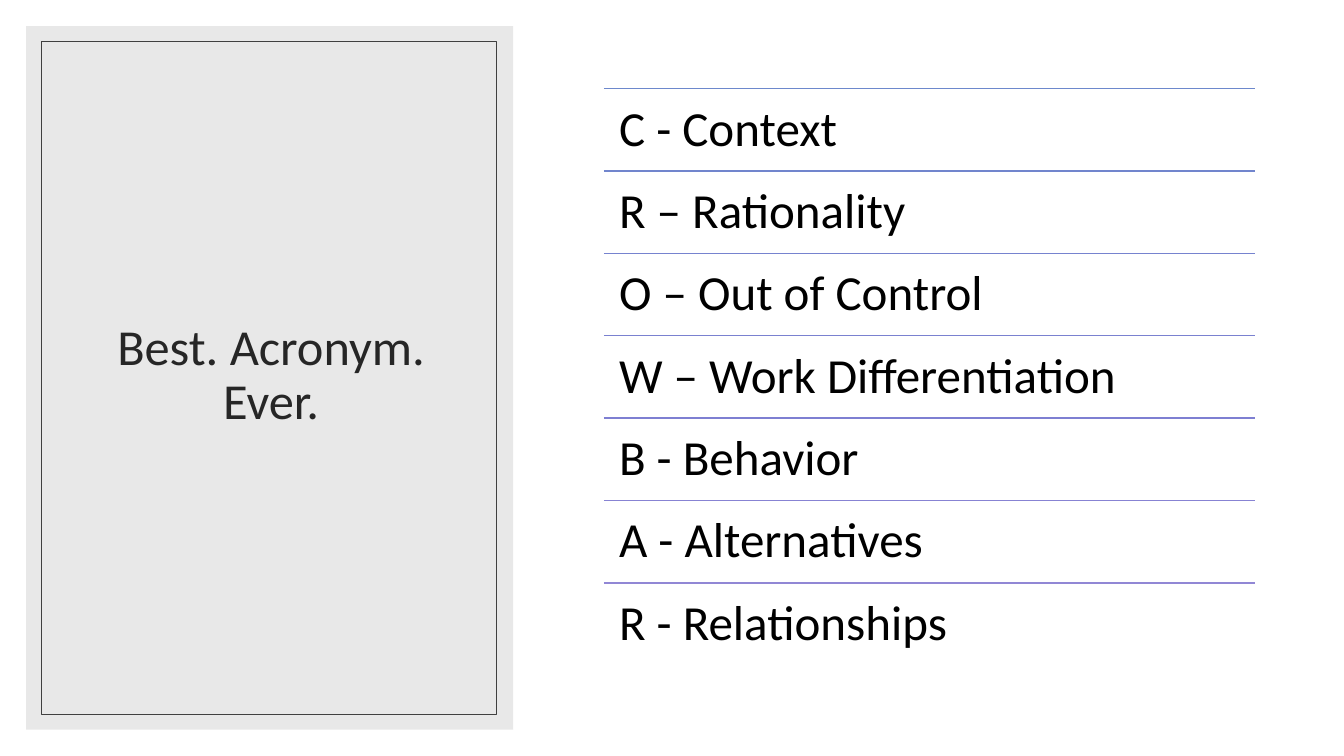
import pptx
import pptx.util
import pptx.dml.color
import pptx.enum.shapes
import pptx.enum.text
import pptx.oxml
import pptx.oxml.ns
import lxml.etree

Inches = pptx.util.Inches
Pt = pptx.util.Pt
RECT = pptx.enum.shapes.MSO_SHAPE.RECTANGLE
STRAIGHT = pptx.enum.shapes.MSO_CONNECTOR.STRAIGHT
ALIGN = pptx.enum.text.PP_ALIGN
ANCHOR = pptx.enum.text.MSO_ANCHOR

ROWS = [
    ("C - Context", "6D88CC"),
    ("R – Rationality", "7185CD"),
    ("O – Out of Control", "7683CF"),
    ("W – Work Differentiation", "7A81D0"),
    ("B - Behavior", "7E7FD2"),
    ("A - Alternatives", "8783D3"),
    ("R - Relationships", "9187D5"),
]


def color(code):
    return pptx.dml.color.RGBColor.from_string(code)


def add_rect(slide, left, top, width, height, fill=None, line=None):
    rect = slide.shapes.add_shape(
        RECT, Inches(left), Inches(top), Inches(width), Inches(height))
    rect.shadow.inherit = False
    if fill:
        rect.fill.solid()
        rect.fill.fore_color.rgb = color(fill)
    else:
        rect.fill.background()
    if line:
        rect.line.color.rgb = color(line)
        rect.line.width = Pt(0.5)
    else:
        rect.line.fill.background()
    return rect


def set_alpha(shape, share):
    tone = shape.element.spPr.find(".//" + pptx.oxml.ns.qn("a:srgbClr"))
    alpha = lxml.etree.SubElement(tone, pptx.oxml.ns.qn("a:alpha"))
    alpha.set("val", str(share * 1000))


def write(frame, text, size, ink, align):
    frame.word_wrap = True
    par = frame.paragraphs[0]
    par.alignment = align
    par.line_spacing = 0.9
    run = par.add_run()
    run.text = text
    run.font.name = "Calibri"
    run.font.size = Pt(size)
    run.font.color.rgb = color(ink)
    return par


def add_panel(slide, left, top, width, height):
    panel = add_rect(slide, left, top, width, height, fill="D9D9D9")
    set_alpha(panel, 60)
    title = slide.shapes.title
    title.left, title.top = Inches(left + 0.37), Inches(top + 0.35)
    title.width, title.height = Inches(width - 0.71), Inches(height - 0.74)
    frame = title.text_frame
    frame.auto_size = pptx.enum.text.MSO_AUTO_SIZE.NONE
    frame.vertical_anchor = ANCHOR.MIDDLE
    write(frame, "Best. Acronym. Ever.", 36, "262626", ALIGN.CENTER)
    panel.element.addnext(title.element)
    add_rect(slide, left + 0.15, top + 0.15, width - 0.32, height - 0.3,
             line="404040")


def add_rule(slide, left, top, width, tone):
    rule = slide.shapes.add_connector(
        STRAIGHT, Inches(left), Inches(top), Inches(left + width), Inches(top))
    rule.line.color.rgb = color(tone)
    rule.line.width = Pt(1)
    lxml.etree.SubElement(rule.element.spPr, pptx.oxml.ns.qn("a:effectLst"))


def add_list(slide, left, top, width, height):
    step = height / len(ROWS)
    for index, (text, tone) in enumerate(ROWS):
        y = top + index * step
        add_rule(slide, left, y, width, tone)
        box = slide.shapes.add_textbox(
            Inches(left), Inches(y), Inches(width), Inches(step))
        frame = box.text_frame
        frame.margin_left = frame.margin_right = Inches(0.15)
        frame.margin_top = frame.margin_bottom = Inches(0.15)
        frame.vertical_anchor = ANCHOR.TOP
        write(frame, text, 35, "000000", ALIGN.LEFT)


def main():
    deck = pptx.Presentation()
    deck.slide_width, deck.slide_height = Inches(13.33), Inches(7.5)
    slide = deck.slides.add_slide(deck.slide_layouts.get_by_name("Title Only"))
    add_rect(slide, 0, 0, 13.33, 7.5, fill="FFFFFF")
    add_panel(slide, 0.26, 0.26, 4.83, 6.98)
    add_list(slide, 5.99, 0.88, 6.46, 5.72)
    deck.save("out.pptx")


if __name__ == "__main__":
    main()
